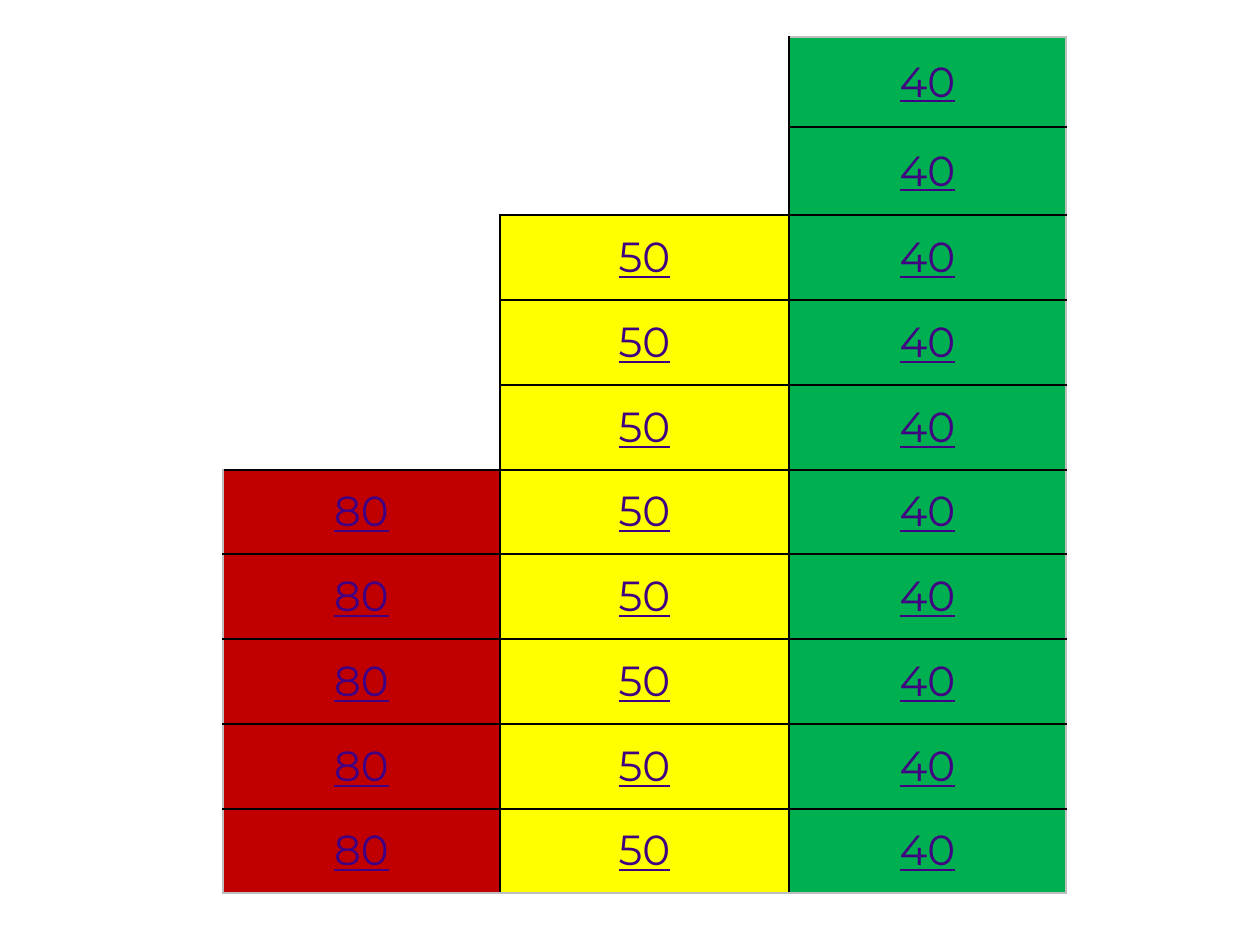
from lxml.etree import SubElement
from pptx import Presentation
from pptx.dml.color import RGBColor
from pptx.enum.text import MSO_ANCHOR, PP_ALIGN
from pptx.oxml.ns import qn
from pptx.util import Emu, Pt

BLACK = RGBColor(0x00, 0x00, 0x00)
GREY = RGBColor(0xBF, 0xBF, 0xBF)
PURPLE = RGBColor(0x41, 0x00, 0x82)
RED = RGBColor(0xC0, 0x00, 0x00)
YELLOW = RGBColor(0xFF, 0xFF, 0x00)
GREEN = RGBColor(0x00, 0xB0, 0x50)

PLAIN_GRID = "{2D5ABB26-0587-4C30-8999-92F81FD0307C}"
COLUMN_WIDTHS = [277, 289, 277]
ROW_HEIGHTS = [90, 88] + [85, 85, 85, 84] * 2
STEPS = [("80", RED, 5), ("50", YELLOW, 2), ("40", GREEN, 0)]


def px(length):
    return Emu(round(length * 914400 / 126))


def write(frame, text, size=24, font="Montserrat", color=PURPLE, underline=True,
          align=PP_ALIGN.CENTER):
    paragraph = frame.paragraphs[0]
    paragraph.alignment = align
    run = paragraph.add_run()
    run.text = text
    run.font.size = Pt(size)
    run.font.name = font
    run.font.color.rgb = color
    run.font.underline = underline


class StepsSlide:
    def __init__(self, presentation):
        self.border_width = Pt(1)
        self.slide = presentation.slides.add_slide(presentation.slide_layouts[6])

    def grid(self, left, top, widths, heights):
        frame = self.slide.shapes.add_table(
            len(heights), len(widths), px(left), px(top), px(sum(widths)), px(sum(heights)))
        grid = frame.table
        grid.first_row = grid.horz_banding = False
        grid._tbl.tblPr.find(qn("a:tableStyleId")).text = PLAIN_GRID
        for column, width in zip(grid.columns, widths):
            column.width = px(width)
        for row, height in zip(grid.rows, heights):
            row.height = px(height)
        return grid

    def borders(self, cell, **sides):
        properties = cell._tc.get_or_add_tcPr()
        for side, color in sides.items():
            line = SubElement(properties, qn(f"a:ln{side}"), w=str(self.border_width))
            fill = SubElement(line, qn("a:solidFill"))
            SubElement(fill, qn("a:srgbClr"), val=str(color))

    def step(self, cell, text, fill, **sides):
        self.borders(cell, **sides)
        cell.fill.solid()
        cell.fill.fore_color.rgb = fill
        cell.vertical_anchor = MSO_ANCHOR.MIDDLE
        write(cell.text_frame, text)

    def gap(self, first, last, **sides):
        first.merge(last)
        self.borders(first, **sides)
        first.fill.background()


def main():
    presentation = Presentation()
    presentation.slide_width = px(1260)
    presentation.slide_height = px(945)
    page = StepsSlide(presentation)
    grid = page.grid(223, 37, COLUMN_WIDTHS, ROW_HEIGHTS)
    page.gap(grid.cell(0, 0), grid.cell(1, 1), R=BLACK)
    page.gap(grid.cell(2, 0), grid.cell(4, 0), R=BLACK, B=BLACK)
    last_column, last_row = len(STEPS) - 1, len(ROW_HEIGHTS) - 1
    for column, (points, fill, start) in enumerate(STEPS):
        for row in range(start, last_row + 1):
            page.step(
                grid.cell(row, column), points, fill,
                L=GREY if column == 0 else BLACK,
                R=GREY if column == last_column else BLACK,
                T=GREY if row == 0 else BLACK,
                B=GREY if row == last_row else BLACK)
    presentation.save("out.pptx")


if __name__ == "__main__":
    main()
